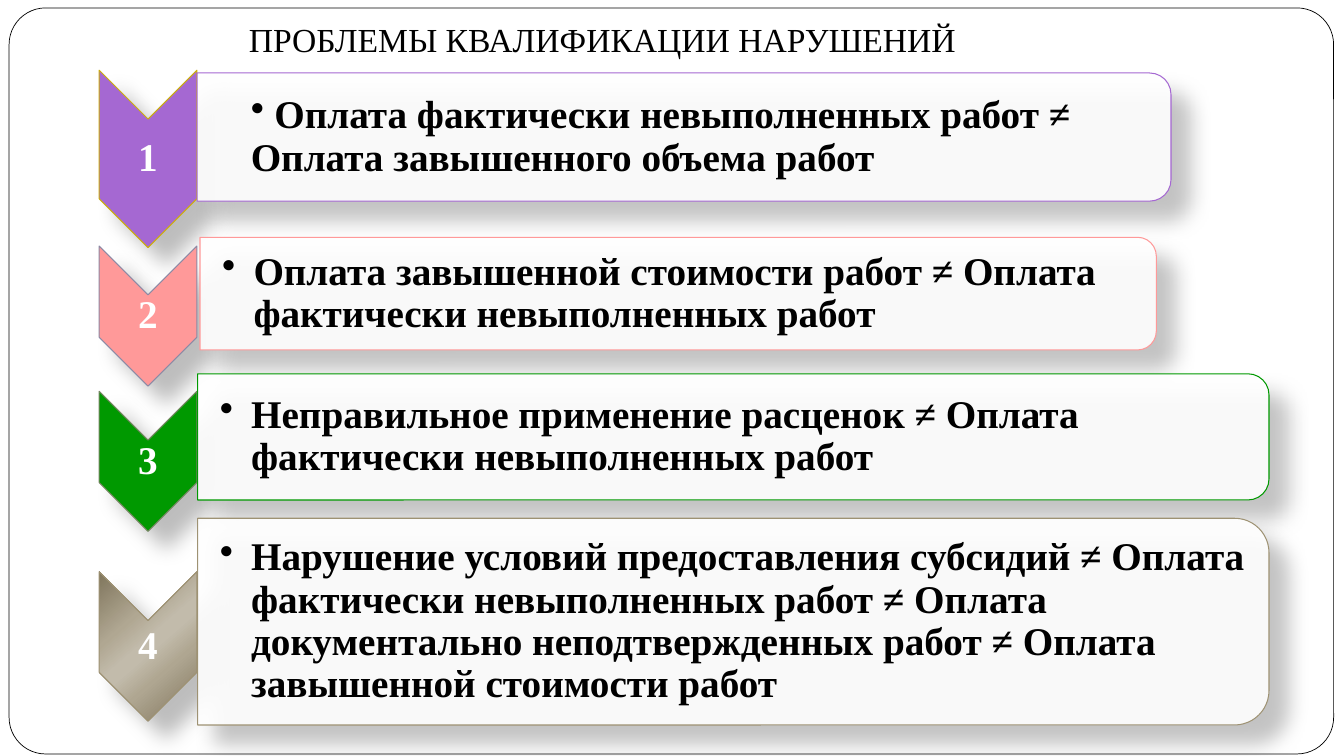
from dataclasses import dataclass

from pptx import Presentation
from pptx.dml.color import RGBColor
from pptx.enum.shapes import MSO_SHAPE
from pptx.enum.text import MSO_ANCHOR, MSO_AUTO_SIZE, PP_ALIGN
from pptx.oxml.ns import qn
from pptx.oxml.xmlchemy import OxmlElement
from pptx.util import Cm, Pt

CHEVRON, PANEL, FRAME = MSO_SHAPE.CHEVRON, MSO_SHAPE.ROUND_2_SAME_RECTANGLE, MSO_SHAPE.ROUNDED_RECTANGLE
MIDDLE, BOTTOM = MSO_ANCHOR.MIDDLE, MSO_ANCHOR.BOTTOM
LEFT, CENTER = PP_ALIGN.LEFT, PP_ALIGN.CENTER


@dataclass(frozen=True)
class Theme:
    """Colours, font and type sizes of the deck."""
    font: str = "Times New Roman"
    black: str = "000000"
    white: str = "FFFFFF"
    title_size: int = 24
    body_size: int = 28
    bronze: tuple = ((0, "7F755C"), (33, "AFA691"), (47, "C2BBAB"),
                     (53, "C2BBAB"), (68, "B0A792"), (100, "7F755C"))


THEME = Theme()

TITLE = "ПРОБЛЕМЫ КВАЛИФИКАЦИИ НАРУШЕНИЙ"
PROBLEMS = [
    dict(text=" Оплата фактически невыполненных работ ≠ Оплата завышенного объема работ",
         fill="A568D2", edge="CCAF0A", border="A568D2", hanging=0,
         arrow=(1.77, 4.47), panel=(4.97, 1.84, 24.54, 3.23)),
    dict(text="Оплата завышенной стоимости работ ≠ Оплата фактически невыполненных работ",
         fill="FF9999", edge="8D89A4", border="FF9999", hanging=0.79,
         arrow=(6.2, 3.53), panel=(5.04, 5.98, 24.1, 2.84)),
    dict(text="Неправильное применение расценок ≠ Оплата фактически невыполненных работ",
         fill="009900", edge="748560", border="009900", hanging=0.79,
         arrow=(9.86, 3.53), panel=(4.98, 9.42, 27, 3.18)),
    dict(text="Нарушение условий предоставления субсидий ≠ Оплата фактически невыполненных работ ≠ "
              "Оплата документально неподтвержденных работ ≠ Оплата завышенной стоимости работ",
         fill=THEME.bronze, edge="9E9273", border="9E9273", hanging=0.79,
         arrow=(14.41, 3.76), panel=(4.98, 13.06, 27, 5.21)),
]


def add_node(parent, tag, **attributes):
    """Append an XML child with the given attributes and return it."""
    node = OxmlElement(tag)
    for name, value in attributes.items():
        node.set(name, str(value))
    parent.append(node)
    return node


def paint(shape, fill, border, width):
    """Give a shape a plain or gradient fill and an outline, without shadow."""
    shape.shadow.inherit = False
    if isinstance(fill, str):
        shape.fill.solid()
        shape.fill.fore_color.rgb = RGBColor.from_string(fill)
    else:
        shape.fill.gradient()
        gradient = shape._element.spPr.find(qn("a:gradFill"))
        stops = gradient.find(qn("a:gsLst"))
        for stop in list(stops):
            stops.remove(stop)
        for position, color in fill:
            stop = add_node(stops, "a:gs", pos=position * 1000)
            add_node(stop, "a:srgbClr", val=color)
        gradient.find(qn("a:lin")).set("ang", str(139 * 60000))
    shape.line.color.rgb = RGBColor.from_string(border)
    shape.line.width = Pt(width)


def add_turned(page, kind, box, fill, border):
    """Add a shadowed shape turned a quarter clockwise so that it covers the box."""
    left, top, width, height = box
    shift = (width - height) / 2
    shape = page.shapes.add_shape(kind, Cm(left + shift), Cm(top - shift), Cm(height), Cm(width))
    shape.rotation = 90
    paint(shape, fill, border, 0.75)
    effects = shape._element.spPr.find(qn("a:effectLst"))
    shadow = add_node(effects, "a:outerShdw", blurRad=Pt(15), dist=Pt(18),
                      dir=45 * 60000, algn="tl", rotWithShape=0)
    color = add_node(shadow, "a:srgbClr", val=THEME.black)
    add_node(color, "a:alpha", val=26000)
    return shape


def write(frame, text, size=THEME.body_size, color=THEME.black, bold=True, align=LEFT,
          anchor=MIDDLE, insets=(0.05, 0.05, 0.05, 0.05), spacing=0.9, hanging=None):
    """Fill a text frame with one formatted paragraph, bulleted if hanging is given."""
    frame.word_wrap = True
    frame.auto_size = MSO_AUTO_SIZE.NONE
    frame.vertical_anchor = anchor
    frame.margin_left, frame.margin_top, frame.margin_right, frame.margin_bottom = map(Cm, insets)
    para = frame.paragraphs[0]
    para.alignment = align
    para.line_spacing = spacing
    if hanging is not None:
        properties = para._p.get_or_add_pPr()
        properties.set("marL", str(Cm(0.79)))
        properties.set("indent", str(-Cm(hanging)))
        add_node(properties, "a:buChar", char="•")
    span = para.add_run()
    span.text = text
    span.font.name = THEME.font
    span.font.size = Pt(size)
    span.font.bold = bold
    span.font.color.rgb = RGBColor.from_string(color)


def add_text(page, box, text, **style):
    """Add a text box over the given box."""
    write(page.shapes.add_textbox(*map(Cm, box)).text_frame, text, **style)


def add_frame(page, box):
    """Draw the thin rounded frame around the page."""
    frame = page.shapes.add_shape(FRAME, *map(Cm, box))
    frame.adjustments[0] = 0.049
    paint(frame, THEME.white, THEME.black, 0.5)


def add_title(page, box):
    """Move and format the title placeholder."""
    title = page.shapes.title
    title.left, title.top, title.width, title.height = map(Cm, box)
    write(title.text_frame, TITLE, size=THEME.title_size, bold=False, anchor=BOTTOM,
          insets=(0.25, 0.13, 0.25, 0.25), spacing=1)


def add_arrow(page, box, number, fill, edge):
    """Draw a downward chevron with its number."""
    add_turned(page, CHEVRON, box, fill, edge)
    add_text(page, box, str(number), color=THEME.white, align=CENTER)


def add_panel(page, box, text, border, hanging):
    """Draw a panel rounded on the right with its bulleted text."""
    left, top, width, height = box
    panel = add_turned(page, PANEL, box, THEME.white, border)
    color = panel._element.spPr.find(qn("a:solidFill")).find(qn("a:srgbClr"))
    add_node(color, "a:alpha", val=90000)
    corner = height * 0.05
    add_text(page, (left, top + corner, width - corner, height - 2 * corner), text,
             insets=(0.56, 0.05, 0.05, 0.05), hanging=hanging)


def main():
    """Build and save the deck."""
    deck = Presentation()
    deck.slide_width, deck.slide_height = Cm(33.87), Cm(19.05)
    page = deck.slides.add_slide(deck.slide_layouts[5])
    add_frame(page, (0.23, 0.2, 33.38, 18.8))
    for number, problem in enumerate(PROBLEMS, 1):
        top, height = problem["arrow"]
        add_arrow(page, (2.5, top, 2.46, height), number, problem["fill"], problem["edge"])
        add_panel(page, problem["panel"], problem["text"], problem["border"], problem["hanging"])
    add_title(page, (6.02, 0.58, 24.21, 1.17))
    page.shapes._spTree.append(page.shapes.title._element)
    deck.save("out.pptx")


if __name__ == "__main__":
    main()
